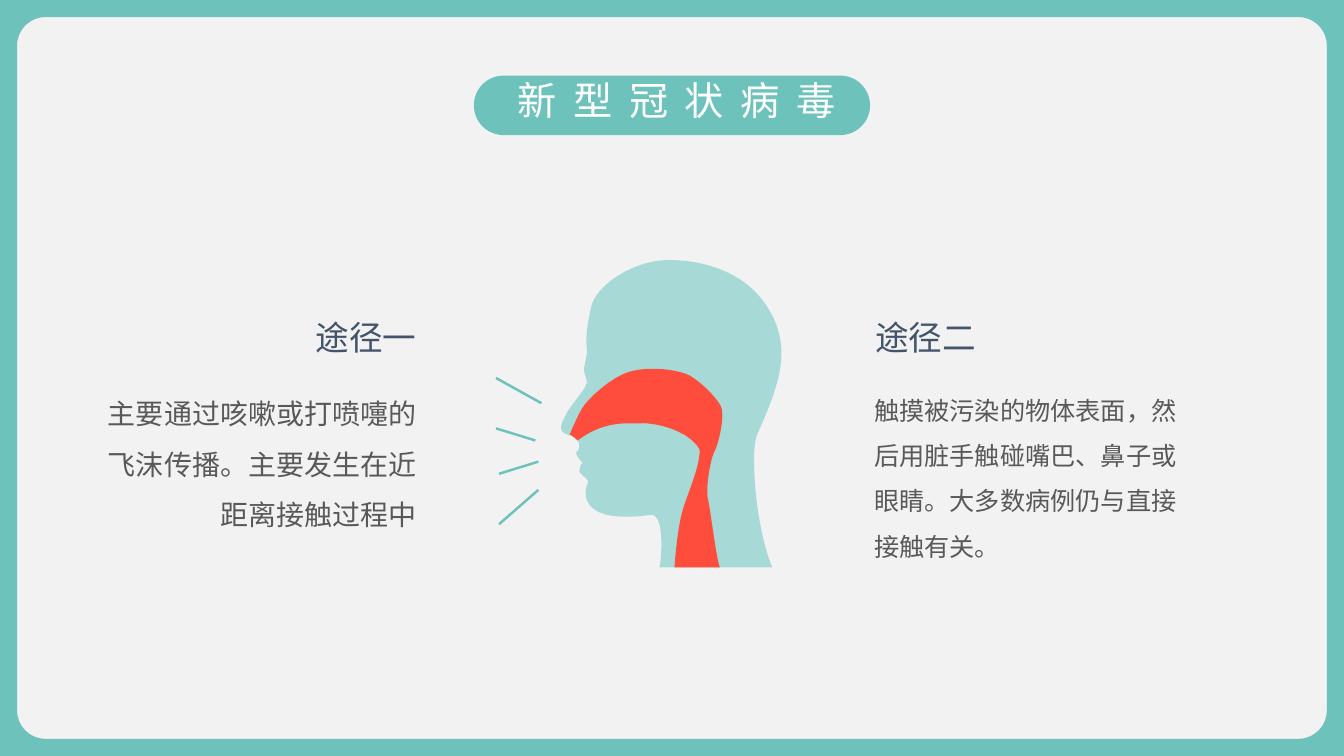
from dataclasses import dataclass

import pptx
import pptx.dml.color
import pptx.enum.shapes
import pptx.enum.text
import pptx.oxml.ns
import pptx.util
from lxml import etree
from pptx.util import Inches

Point = tuple[float, float]
Step = tuple[Point, ...]  # one point for a straight step, three for a Bezier curve
ALIGN = pptx.enum.text.PP_ALIGN
ANCHOR = pptx.enum.text.MSO_ANCHOR
FIT = pptx.enum.text.MSO_AUTO_SIZE
TEAL, PALE_TEAL, RED = "6DC2BB", "A7DAD6", "FF4D3D"
LIGHT, WHITE, NAVY, GREY = "F2F2F2", "FFFFFF", "44546A", "595959"
WIDTH, HEIGHT = 13.33, 7.5


@dataclass
class Route:
    heading: str
    heading_box: tuple[float, float, float, float]
    body: str
    body_box: tuple[float, float, float, float]
    size: float
    align: ALIGN


@dataclass
class Breath:
    start: Point
    end: Point


ROUTES = [
    Route("途径二", (8.58, 3.1, 1.72, 0.48),
          "触摸被污染的物体表面，然后用脏手触碰嘴巴、鼻子或眼睛。大多数病例仍与直接接触有关。",
          (8.57, 3.72, 3.31, 1.35), 18, ALIGN.LEFT),
    Route("途径一", (2.98, 3.1, 1.25, 0.48),
          "主要通过咳嗽或打喷嚏的飞沫传播。主要发生在近距离接触过程中",
          (0.92, 3.72, 3.31, 1.54), 20, ALIGN.RIGHT),
]
BREATHS = [
    Breath((4.92, 3.75), (5.37, 4)),
    Breath((4.95, 5.2), (5.34, 4.86)),
    Breath((4.95, 4.7), (5.34, 4.58)),
    Breath((4.92, 4.25), (5.31, 4.37)),
]
# Each outline is a start point, then three points for every Bezier curve.
HEAD = [
    (7.66, 5.63),
    (7.49, 5.22), (7.44, 4.47), (7.51, 4.31), (7.72, 3.84), (7.87, 3.46), (7.62, 3.06),
    (7.4, 2.7), (6.99, 2.58), (6.63, 2.58), (6.3, 2.58), (5.94, 2.81), (5.87, 3.02),
    (5.82, 3.22), (5.81, 3.38), (5.82, 3.44), (5.83, 3.5), (5.81, 3.56), (5.8, 3.62),
    (5.78, 3.67), (5.8, 3.71), (5.82, 3.77), (5.85, 3.82), (5.66, 4.02), (5.62, 4.1),
    (5.58, 4.18), (5.53, 4.26), (5.6, 4.3), (5.68, 4.33), (5.73, 4.35), (5.74, 4.39),
    (5.75, 4.42), (5.75, 4.47), (5.72, 4.48), (5.7, 4.49), (5.74, 4.56), (5.78, 4.59),
    (5.76, 4.6), (5.73, 4.68), (5.76, 4.7), (5.79, 4.73), (5.85, 4.76), (5.83, 4.8),
    (5.8, 4.84), (5.75, 5.08), (6.09, 5.12), (6.44, 5.15), (6.47, 5.06), (6.52, 5.15),
    (6.58, 5.25), (6.56, 5.57), (6.54, 5.63),
]
AIRWAY = [
    (7.14, 5.63),
    (7.1, 5.52), (7.05, 5.07), (7.02, 4.94), (7, 4.81), (7.05, 4.53), (7.1, 4.45),
    (7.14, 4.35), (7.19, 4.11), (7.15, 4.03), (7.1, 3.94), (6.97, 3.8), (6.83, 3.72),
    (6.67, 3.65), (6.39, 3.64), (6.24, 3.69), (6.07, 3.74), (5.88, 3.92), (5.82, 3.99),
    (5.76, 4.05), (5.7, 4.2), (5.65, 4.31), (5.69, 4.33), (5.71, 4.35), (5.73, 4.37),
    (5.98, 4.18), (6.2, 4.2), (6.33, 4.2), (6.47, 4.19), (6.66, 4.24), (6.76, 4.3),
    (6.82, 4.32), (6.94, 4.43), (6.94, 4.47), (6.94, 4.65), (6.8, 4.94), (6.77, 5.07),
    (6.73, 5.2), (6.7, 5.47), (6.69, 5.63),
]


def rgb(colour: str) -> pptx.dml.color.RGBColor:
    return pptx.dml.color.RGBColor.from_string(colour)


def paint(shape, colour: str) -> None:
    shape.fill.solid()
    shape.fill.fore_color.rgb = rgb(colour)
    shape.line.fill.background()
    shape.shadow.inherit = False


def curve_steps(outline: list[Point]) -> list[Step]:
    return [(outline[0],)] + [tuple(outline[i:i + 3]) for i in range(1, len(outline), 3)]


def rounded_panel(margin: float, radius: float) -> list[Step]:
    """Go round the panel anticlockwise, one curve to each corner."""
    left, top, right, bottom = margin, margin, WIDTH - margin, HEIGHT - margin
    corners = [(left, top, 1, 0, 0, 1), (left, bottom, 0, -1, 1, 0),
               (right, bottom, -1, 0, 0, -1), (right, top, 0, 1, -1, 0)]
    pull = 0.45 * radius  # distance of the control points from the corner
    steps = []
    for x, y, in_x, in_y, out_x, out_y in corners:
        steps.append(((x + in_x * radius, y + in_y * radius),))
        steps.append(((x + in_x * pull, y + in_y * pull),
                      (x + out_x * pull, y + out_y * pull),
                      (x + out_x * radius, y + out_y * radius)))
    return steps


def add_outline(shapes, contours: list[list[Step]], colour: str) -> None:
    """Draw the ends of all steps as a freeform, then bend its curved steps."""
    ends = [[tuple(map(Inches, step[-1])) for step in contour] for contour in contours]
    builder = shapes.build_freeform(*ends[0][0])
    for number, contour in enumerate(ends):
        if number:
            builder.move_to(*contour[0])
        builder.add_line_segments(contour[1:], close=True)
    shape = builder.convert_to_shape()
    paint(shape, colour)

    qn = pptx.oxml.ns.qn
    segments = list(shape.element.iter(qn("a:lnTo")))
    steps = [step for contour in contours for step in contour[1:]]
    for segment, step in zip(segments, steps):
        if len(step) == 3:
            curve = etree.Element(qn("a:cubicBezTo"))
            for x, y in step:
                etree.SubElement(curve, qn("a:pt"), x=str(Inches(x) - shape.left),
                                 y=str(Inches(y) - shape.top))
            segment.getparent().replace(segment, curve)


def write(box, text: str, *, size: float, colour: str, align=ALIGN.LEFT, anchor=ANCHOR.TOP,
          line_spacing: float = 1.0, letter_spacing: float = 0, wrap: bool = True,
          fit=FIT.SHAPE_TO_FIT_TEXT) -> None:
    frame = box.text_frame
    frame.word_wrap = wrap
    frame.auto_size = fit
    frame.vertical_anchor = anchor
    para = frame.paragraphs[0]
    para.alignment = align
    para.line_spacing = line_spacing
    span = para.add_run()
    span.text = text
    span.font.name = "Arial"
    span.font.size = pptx.util.Pt(size)
    span.font.color.rgb = rgb(colour)
    if letter_spacing:
        span.font._element.set("spc", str(round(letter_spacing * 100)))


def add_title(page, text: str) -> None:
    pill = page.shapes.add_shape(pptx.enum.shapes.MSO_SHAPE.ROUNDED_RECTANGLE,
                                 Inches(4.7), Inches(0.75), Inches(3.93), Inches(0.59))
    pill.adjustments[0] = 0.5
    paint(pill, TEAL)
    title = page.shapes.title
    title.left, title.top = Inches(5.03), Inches(0.71)
    title.width, title.height = Inches(3.53), Inches(0.57)
    write(title, text, size=28, colour=WHITE, letter_spacing=12, wrap=False, fit=FIT.NONE)
    title.element.getparent().append(title.element)  # bring in front of the pill


def add_route(page, route: Route) -> None:
    group = page.shapes.add_group_shape()
    heading = group.shapes.add_textbox(*map(Inches, route.heading_box))
    write(heading, route.heading, size=24, colour=NAVY, align=route.align,
          anchor=ANCHOR.MIDDLE)
    body = group.shapes.add_textbox(*map(Inches, route.body_box))
    write(body, route.body, size=route.size, colour=GREY, align=route.align,
          line_spacing=1.5)


def add_breath(shapes, breath: Breath) -> None:
    line = shapes.add_connector(pptx.enum.shapes.MSO_CONNECTOR.STRAIGHT,
                                *map(Inches, breath.start + breath.end))
    line.line.color.rgb = rgb(TEAL)
    line.line.width = pptx.util.Pt(1.75)
    etree.SubElement(line.element.spPr, pptx.oxml.ns.qn("a:effectLst"))


def main() -> None:
    deck = pptx.Presentation()
    deck.slide_width, deck.slide_height = Inches(WIDTH), Inches(HEIGHT)
    page = deck.slides.add_slide(deck.slide_layouts.get_by_name("Title Only"))
    page.background.fill.solid()
    page.background.fill.fore_color.rgb = rgb(LIGHT)

    border = [((0, 0),), ((WIDTH, 0),), ((WIDTH, HEIGHT),), ((0, HEIGHT),)]
    add_outline(page.shapes, [border, rounded_panel(0.17, 0.28)], TEAL)
    add_title(page, "新型冠状病毒")
    for route in ROUTES:
        add_route(page, route)

    figure = page.shapes.add_group_shape()
    for outline, colour in ((HEAD, PALE_TEAL), (AIRWAY, RED)):
        add_outline(figure.shapes, [curve_steps(outline)], colour)
    for breath in BREATHS:
        add_breath(figure.shapes, breath)
    deck.save("out.pptx")


if __name__ == "__main__":
    main()
